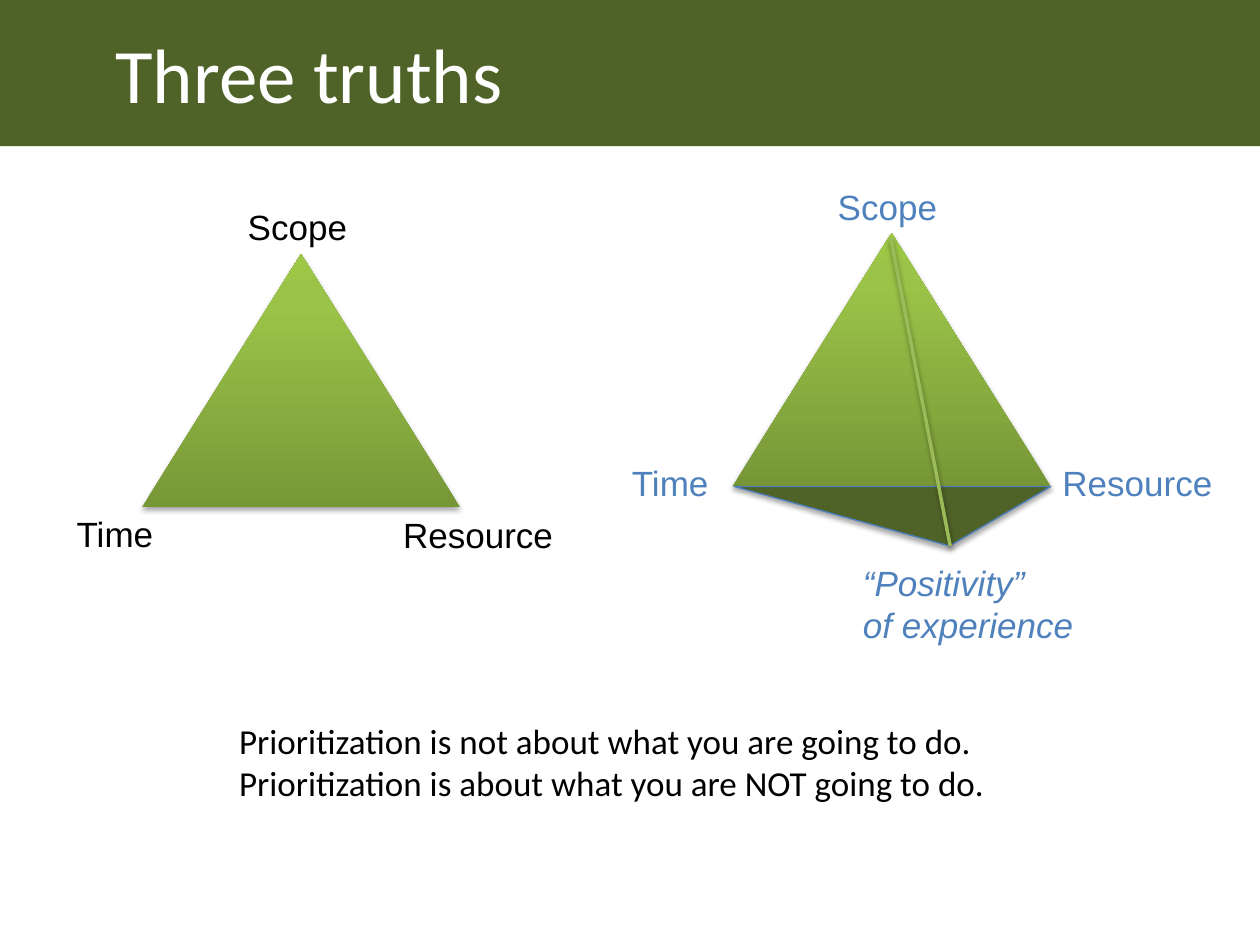
import copy

import lxml.etree
import pptx
import pptx.dml.color
import pptx.enum.shapes
import pptx.enum.text
import pptx.oxml.ns
import pptx.util

Pt = pptx.util.Pt
RGBColor = pptx.dml.color.RGBColor
qn = pptx.oxml.ns.qn

WHITE = RGBColor(0xFF, 0xFF, 0xFF)
BLACK = RGBColor(0, 0, 0)
BLUE = RGBColor(0x4F, 0x81, 0xBD)
BASE_LINE = RGBColor(0x4B, 0x7E, 0xBC)
DARK_GREEN = RGBColor(0x4F, 0x62, 0x28)
EDGE_GREEN = RGBColor(0x9B, 0xBB, 0x59)
GRADIENT = [
    (0, RGBColor(0x77, 0x97, 0x37)),
    (0.8, RGBColor(0x9B, 0xC3, 0x48)),
    (1, RGBColor(0x9D, 0xC7, 0x46)),
]


def format_text(text_frame, size, font, color, italic=False):
    for paragraph in text_frame.paragraphs:
        for run in paragraph.runs:
            run.font.size = Pt(size)
            run.font.name = font
            run.font.color.rgb = color
            run.font.italic = italic


def add_title(slide, text):
    title = slide.shapes.title
    title.left, title.top, title.width, title.height = Pt(0), Pt(-0.72), Pt(720), Pt(84.24)
    title.fill.solid()
    title.fill.fore_color.rgb = DARK_GREEN
    text_frame = title.text_frame
    text_frame.text = text
    text_frame.margin_left = Pt(66)
    text_frame.vertical_anchor = pptx.enum.text.MSO_ANCHOR.MIDDLE
    text_frame.paragraphs[0].alignment = pptx.enum.text.PP_ALIGN.LEFT
    format_text(text_frame, 44, "Calibri", WHITE)


def add_text(shapes, text, left, top, width, height, color, font="Arial", italic=False, wrap=False):
    box = shapes.add_textbox(Pt(left), Pt(top), Pt(width), Pt(height))
    text_frame = box.text_frame
    text_frame.text = text
    text_frame.word_wrap = wrap
    text_frame.auto_size = pptx.enum.text.MSO_AUTO_SIZE.SHAPE_TO_FIT_TEXT
    format_text(text_frame, 20, font, color, italic)


def add_shadow(shape, distance, opacity):
    effects = lxml.etree.SubElement(shape.element.spPr, qn("a:effectLst"))
    shadow = lxml.etree.SubElement(
        effects, qn("a:outerShdw"), blurRad=str(Pt(3.1)), dist=str(Pt(distance)),
        dir="5400000", rotWithShape="0")
    color = lxml.etree.SubElement(shadow, qn("a:srgbClr"), val="000000")
    lxml.etree.SubElement(color, qn("a:alpha"), val=str(opacity * 1000))


def add_triangle(shapes, left, top, width, height):
    triangle = shapes.add_shape(
        pptx.enum.shapes.MSO_SHAPE.ISOSCELES_TRIANGLE,
        Pt(left), Pt(top), Pt(width), Pt(height))
    add_shadow(triangle, 1.8, 35)
    return triangle


def add_face(shapes, left, top):
    face = add_triangle(shapes, left, top, 182, 144.8)
    face.line.fill.background()
    face.fill.gradient()
    face.fill.gradient_angle = 90
    stop_list = face.fill._fill._gradFill.find(qn("a:gsLst"))
    stop_list.append(copy.deepcopy(stop_list[-1]))
    for stop, (position, color) in zip(face.fill.gradient_stops, GRADIENT):
        stop.position = position
        stop.color.rgb = color


def add_base(shapes, left, top, width, height):
    base = add_triangle(shapes, left, top, width, height)
    base.element.spPr.xfrm.set("flipV", "1")
    base.adjustments[0] = 0.68
    base.fill.solid()
    base.fill.fore_color.rgb = DARK_GREEN
    base.line.color.rgb = BASE_LINE
    base.line.width = Pt(0.75)


def add_edge(shapes, start_x, start_y, end_x, end_y):
    edge = shapes.add_connector(
        pptx.enum.shapes.MSO_CONNECTOR.STRAIGHT,
        Pt(start_x), Pt(start_y), Pt(end_x), Pt(end_y))
    edge.line.color.rgb = EDGE_GREEN
    edge.line.width = Pt(2)
    add_shadow(edge, 1.6, 38)


def add_corner_labels(shapes, color, time, scope, resource):
    add_text(shapes, "Time", *time, 59, 31.5, color)
    add_text(shapes, "Scope", *scope, 72, 31.5, color)
    add_text(shapes, "Resource", *resource, 101, 31.5, color)


def add_pyramid(slide):
    shapes = slide.shapes.add_group_shape().shapes
    add_face(shapes, 418.5, 133.2)
    add_corner_labels(shapes, BLUE, (354, 260), (471.6, 102.2), (600, 260))
    add_base(shapes, 419.5, 278, 181, 34)
    add_edge(shapes, 509, 136, 543, 312)
    add_text(shapes, "“Positivity”\nof experience", 486, 317.5, 135.4, 55.5, BLUE, italic=True)


def add_flat_triangle(slide):
    shapes = slide.shapes.add_group_shape().shapes
    add_face(shapes, 81, 145.2)
    add_corner_labels(shapes, BLACK, (36.7, 289.5), (134.5, 114), (223.2, 290))


def main():
    presentation = pptx.Presentation()
    presentation.slide_width = Pt(720)
    presentation.slide_height = Pt(540)
    slide = presentation.slides.add_slide(presentation.slide_layouts[5])
    add_title(slide, "Three truths")
    add_pyramid(slide)
    add_flat_triangle(slide)
    add_text(
        slide.shapes,
        "Prioritization is not about what you are going to do.\n"
        "Prioritization is about what you are NOT going to do.",
        129.6, 407.5, 488, 55.5, BLACK, font="Calibri", wrap=True)
    presentation.save("out.pptx")


if __name__ == "__main__":
    main()
